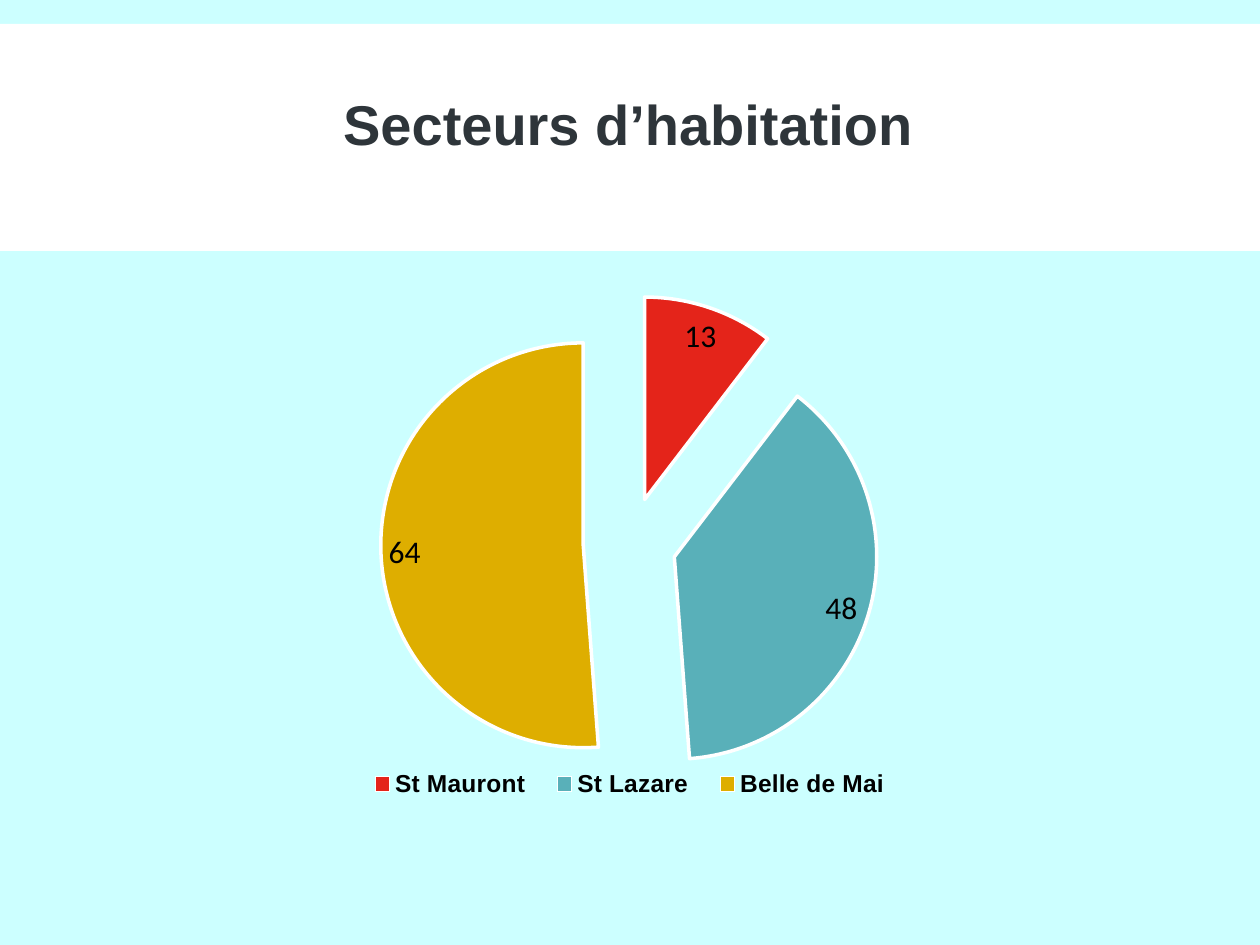
from dataclasses import dataclass

from lxml import etree
from pptx import Presentation
from pptx.chart.data import CategoryChartData
from pptx.dml.color import RGBColor
from pptx.enum.chart import XL_CHART_TYPE, XL_LABEL_POSITION, XL_LEGEND_POSITION
from pptx.enum.shapes import MSO_SHAPE
from pptx.enum.text import MSO_ANCHOR, PP_ALIGN
from pptx.oxml.ns import qn
from pptx.util import Cm, Pt

PIE = XL_CHART_TYPE.PIE
BEST_FIT = XL_LABEL_POSITION.BEST_FIT
LEGEND_BOTTOM = XL_LEGEND_POSITION.BOTTOM
RECTANGLE = MSO_SHAPE.RECTANGLE
MIDDLE = MSO_ANCHOR.MIDDLE
CENTER = PP_ALIGN.CENTER
TITLE_ONLY_LAYOUT = 5


@dataclass(frozen=True)
class Theme:
    background: str = "CCFFFF"
    white: str = "FFFFFF"
    title: str = "2E353A"
    text: str = "000000"
    slices: tuple = ("E4241A", "59B0B9", "DEAE00")
    heading_font: str = "Arial"
    chart_font: str = "Calibri"
    title_size: int = 32
    label_size: int = 18
    legend_size: int = 14
    chart_size: int = 10


def format_font(font, name, size, color, bold=False):
    font.name = name
    font.size = Pt(size)
    font.bold = bold
    font.color.rgb = RGBColor.from_string(color)


def write_text(frame, text, line_spacing=1, alignment=CENTER, **font_format):
    frame.word_wrap = True
    frame.vertical_anchor = MIDDLE
    paragraph = frame.paragraphs[0]
    paragraph.alignment = alignment
    paragraph.line_spacing = line_spacing
    run = paragraph.add_run()
    run.text = text
    format_font(run.font, **font_format)


def place_legend(legend, **fractions):
    element = legend._element
    for existing in element.findall(qn("c:layout")):
        element.remove(existing)
    layout = etree.Element(qn("c:layout"))
    manual = etree.SubElement(layout, qn("c:manualLayout"))
    for mode in ("xMode", "yMode"):
        etree.SubElement(manual, qn(f"c:{mode}"), val="edge")
    for side, fraction in fractions.items():
        etree.SubElement(manual, qn(f"c:{side}"), val=str(fraction))
    element.find(qn("c:legendPos")).addnext(layout)


class SlideBuilder:
    def __init__(self, presentation, theme):
        self.theme = theme
        self.slide = presentation.slides.add_slide(presentation.slide_layouts[TITLE_ONLY_LAYOUT])
        self.fill(self.slide.background, theme.background)

    def fill(self, target, color):
        target.fill.solid()
        target.fill.fore_color.rgb = RGBColor.from_string(color)

    def band(self, left, top, width, height):
        shape = self.slide.shapes.add_shape(RECTANGLE, Cm(left), Cm(top), Cm(width), Cm(height))
        shape.shadow.inherit = False
        self.fill(shape, self.theme.white)
        shape.line.fill.background()
        self.slide.shapes.title._element.addprevious(shape._element)

    def title(self, text, left, top, width, height):
        title = self.slide.shapes.title
        title.left, title.top, title.width, title.height = map(Cm, (left, top, width, height))
        theme = self.theme
        write_text(title.text_frame, text, line_spacing=0.85, name=theme.heading_font,
                   size=theme.title_size, color=theme.title, bold=True)

    def pie(self, name, values, explosion, left, top, width, height):
        theme = self.theme
        data = CategoryChartData()
        data.categories = list(values)
        data.add_series(name, list(values.values()))
        frame = self.slide.shapes.add_chart(PIE, Cm(left), Cm(top), Cm(width), Cm(height), data)
        chart = frame.chart
        chart.has_title = False
        format_font(chart.font, theme.chart_font, theme.chart_size, theme.white)

        chart.has_legend = True
        chart.legend.position = LEGEND_BOTTOM
        chart.legend.include_in_layout = False
        format_font(chart.legend.font, theme.heading_font, theme.legend_size, theme.text, bold=True)
        place_legend(chart.legend, x=0.24, y=0.84, w=0.52, h=0.07)

        plot = chart.plots[0]
        plot.vary_by_categories = True
        series = plot.series[0]
        for index, color in enumerate(theme.slices):
            slice_format = series.points[index].format
            self.fill(slice_format, color)
            slice_format.line.width = Pt(2)
            slice_format.line.color.rgb = RGBColor.from_string(theme.white)
        exploded = etree.Element(qn("c:explosion"), val=str(explosion))
        series._element.find(qn("c:dPt")).addprevious(exploded)

        labels = series.data_labels
        labels.show_value = True
        labels.show_percentage = False
        labels.position = BEST_FIT
        format_font(labels.font, theme.chart_font, theme.label_size, theme.text)


def main():
    presentation = Presentation()
    presentation.slide_width = Cm(25.4)
    presentation.slide_height = Cm(19.05)
    builder = SlideBuilder(presentation, Theme())
    builder.band(0, 0.48, 25.4, 4.58)
    builder.title("Secteurs d’habitation", 1.3, 1.12, 22.73, 2.92)
    districts = {"St Mauront": 13, "St Lazare": 48, "Belle de Mai": 64}
    builder.pie("Series 1", districts, 23, 1.9, 5.59, 21.59, 11.68)
    presentation.save("out.pptx")


if __name__ == "__main__":
    main()
